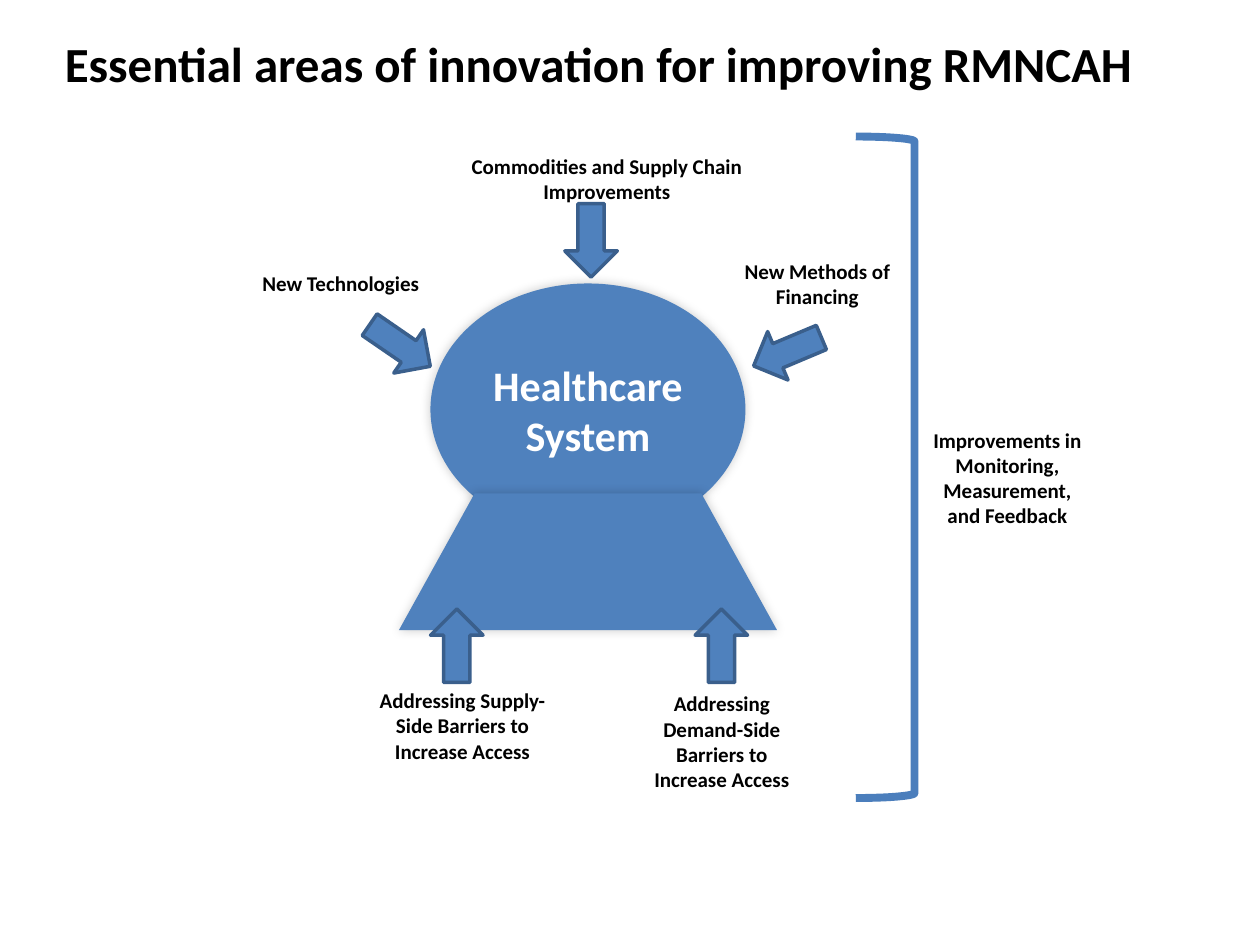
import pptx
import pptx.dml.color
import pptx.enum.shapes
import pptx.enum.text
import pptx.oxml
import pptx.oxml.ns
import pptx.util

COLORS = {
    "blue": "4F81BD",
    "arrow_edge": "3A5F8C",
    "bracket": "4B7EBC",
    "black": "000000",
    "white": "FFFFFF",
}
FONT = "Calibri"
CELL = pptx.util.Inches(1) / 12
ARROW_SIZE = (5, 7)
SHAPES = pptx.enum.shapes.MSO_SHAPE
LEFT = pptx.enum.text.PP_ALIGN.LEFT
CENTER = pptx.enum.text.PP_ALIGN.CENTER

ARROWS = [
    (21, 48, 180),
    (15.6, 19.4, 304.5),
    (33.8, 9.4, 0),
    (52.5, 20, 67.2),
    (46.2, 48, 180),
]
LABELS = [
    ("New Technologies", (3.8, 15.2, 17.5, 3.6), LEFT),
    ("Commodities and Supply Chain Improvements", (22.5, 4, 30.6, 6), CENTER),
    ("New Methods of Financing", (49.1, 14, 17.5, 6), CENTER),
    ("Addressing Demand-Side Barriers to Increase Access", (40, 55.2, 17.5, 10.9), CENTER),
    ("Addressing Supply-Side Barriers to Increase Access", (14.4, 54.9, 19.3, 8.5), CENTER),
]


def color(name):
    return pptx.dml.color.RGBColor.from_string(COLORS[name])


def place(box, part):
    left, top, width, height = part
    lengths = (box[0] + left, box[1] + top, width, height)
    return [round(length * CELL) for length in lengths]


def write(text_frame, text, size, color_name, alignment):
    text_frame.word_wrap = True
    paragraph = text_frame.paragraphs[0]
    paragraph.alignment = alignment
    run = paragraph.add_run()
    run.text = text
    run.font.name = FONT
    run.font.size = pptx.util.Pt(size)
    run.font.bold = True
    run.font.color.rgb = color(color_name)


def add_text(slide, box, part, text, size=12, alignment=CENTER):
    text_box = slide.shapes.add_textbox(*place(box, part))
    write(text_box.text_frame, text, size, "black", alignment)
    text_box.text_frame.auto_size = pptx.enum.text.MSO_AUTO_SIZE.SHAPE_TO_FIT_TEXT


def add_shape(slide, kind, box, part, fill=None, line=None, line_width=0, rotation=0):
    shape = slide.shapes.add_shape(kind, *place(box, part))
    shape.shadow.inherit = False
    shape.rotation = rotation
    if fill:
        shape.fill.solid()
        shape.fill.fore_color.rgb = color(fill)
    else:
        shape.fill.background()
    if line:
        shape.line.color.rgb = color(line)
        shape.line.width = pptx.util.Pt(line_width)
    else:
        shape.line.fill.background()
    return shape


def add_soft_shadow(shape):
    effects = shape._element.spPr.find(pptx.oxml.ns.qn("a:effectLst"))
    effects.append(pptx.oxml.parse_xml(
        f'<a:outerShdw {pptx.oxml.ns.nsdecls("a")} blurRad="{pptx.util.Pt(6)}" '
        f'dist="0" dir="{315 * 60000}" rotWithShape="0">'
        f'<a:srgbClr val="{COLORS["black"]}"><a:alpha val="20000"/></a:srgbClr>'
        "</a:outerShdw>"
    ))


def draw_title(slide, box):
    add_text(slide, box, (0, 0, 114, 6.8),
             "Essential areas of innovation for improving RMNCAH", 28, LEFT)


def draw_healthcare_system(slide, box):
    head = add_shape(slide, SHAPES.OVAL, box, (21, 17, 30, 24), "blue")
    add_soft_shadow(head)
    write(head.text_frame, "Healthcare System", 24, "white", CENTER)
    head.text_frame.vertical_anchor = pptx.enum.text.MSO_ANCHOR.MIDDLE
    base = add_shape(slide, SHAPES.FLOWCHART_MANUAL_OPERATION, box,
                     (18, 37, 36, 13), "blue", rotation=180)
    add_soft_shadow(base)
    for left, top, rotation in ARROWS:
        add_shape(slide, SHAPES.DOWN_ARROW, box, (left, top, *ARROW_SIZE),
                  "blue", "arrow_edge", 2, rotation)
    for text, part, alignment in LABELS:
        add_text(slide, box, part, text, alignment=alignment)


def draw_feedback(slide, box):
    add_shape(slide, SHAPES.RIGHT_BRACKET, box, (1.5, 3, 5.6, 63),
              line="bracket", line_width=4.5)
    add_text(slide, box, (7.2, 30.1, 17.5, 10.9),
             "Improvements in Monitoring, Measurement, and Feedback")


def main():
    presentation = pptx.Presentation()
    presentation.slide_width = pptx.util.Inches(10)
    presentation.slide_height = pptx.util.Inches(7.5)
    slide = presentation.slides.add_slide(presentation.slide_layouts[6])
    draw_healthcare_system(slide, (20, 10))
    draw_feedback(slide, (80, 10))
    draw_title(slide, (5, 2.6))
    presentation.save("out.pptx")


if __name__ == "__main__":
    main()
